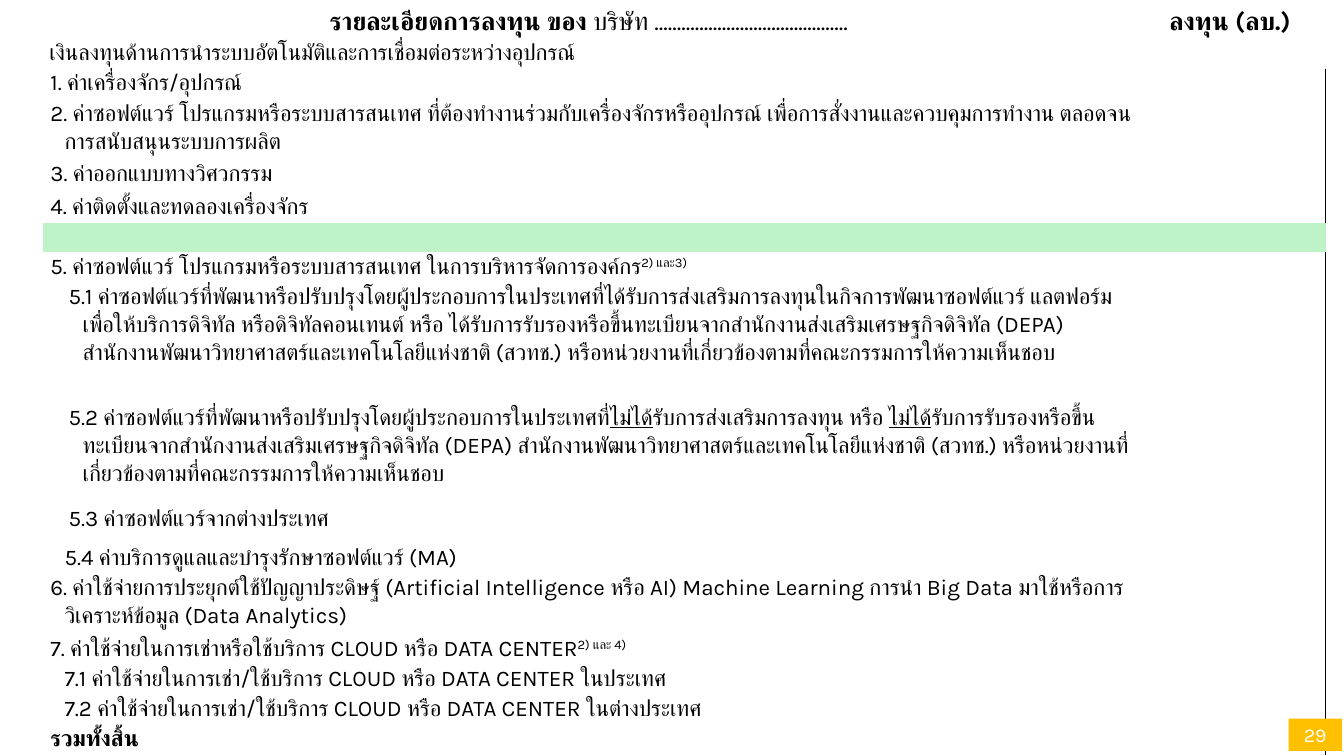
"""Build the investment detail slide: one cost table and a page number."""
from dataclasses import dataclass

from lxml import etree
from pptx import Presentation
from pptx.dml.color import RGBColor
from pptx.enum import shapes, text
from pptx.oxml import ns
from pptx.util import Inches, Pt


@dataclass(frozen=True)
class Theme:
    font: str = "Karla"
    black: str = "000000"
    white: str = "FFFFFF"
    green: str = "BEF2C7"
    amber: str = "FFC000"
    heading: int = 18
    body: int = 16
    number: int = 14
    spacer: int = 8
    line_spacing: float = 1.07


@dataclass(frozen=True)
class Span:
    words: str
    bold: bool | None = None
    underline: bool | None = None
    raised: bool = False


@dataclass(frozen=True)
class Row:
    height: float
    spans: tuple[Span, ...] = ()
    margin: float = 0.21
    hanging: float = -0.14
    fill: str | None = None
    bold: bool = False
    merged: bool = False


THEME = Theme()
NO_STYLE = "{2D5ABB26-0587-4C30-8999-92F81FD0307C}"
TITLE = (Span("รายละเอียดการลงทุน ของ ", bold=True),
         Span("บริษัท ...........................................", bold=False))
AMOUNT = (Span("ลงทุน (ลบ.)"),)
TITLE_HEIGHT = 0.33
COLUMNS = (10.82, 1.9)
ROWS = (
    Row(0.3, (Span("เงินลงทุนด้านการนำระบบอัตโนมัติและการเชื่อมต่อระหว่างอุปกรณ์"),),
        margin=0.06, hanging=0, merged=True),
    Row(0.3, (Span("1. ค่าเครื่องจักร/อุปกรณ์"),), margin=0.07, hanging=0, fill=THEME.white),
    Row(0.6, (Span("2. ค่าซอฟต์แวร์ โปรแกรมหรือระบบสารสนเทศ ที่ต้องทำงานร่วมกับเครื่องจักรหรืออุปกรณ์ "
                   "เพื่อการสั่งงานและควบคุมการทำงาน ตลอดจนการสนับสนุนระบบการผลิต"),),
        fill=THEME.white),
    Row(0.33, (Span("3. ค่าออกแบบทางวิศวกรรม"),), fill=THEME.white),
    Row(0.3, (Span("4. ค่าติดตั้งและทดลองเครื่องจักร"),), fill=THEME.white),
    Row(0.29, fill=THEME.green, merged=True),
    Row(0.3, (Span("5. ค่าซอฟต์แวร์ โปรแกรมหรือระบบสารสนเทศ ในการบริหารจัดการองค์กร"),
              Span("2) และ3)", raised=True))),
    Row(1.2, (Span("5.1 ค่าซอฟต์แวร์ที่พัฒนาหรือปรับปรุงโดยผู้ประกอบการในประเทศที่ได้รับการส่งเสริมการลงทุน"
                   "ในกิจการพัฒนาซอฟต์แวร์ แลตฟอร์มเพื่อให้บริการดิจิทัล หรือดิจิทัลคอนเทนต์ หรือ "
                   "ได้รับการรับรองหรือขึ้นทะเบียนจากสำนักงานส่งเสริมเศรษฐกิจดิจิทัล (DEPA) "
                   "สำนักงานพัฒนาวิทยาศาสตร์และเทคโนโลยีแห่งชาติ (สวทช.) "
                   "หรือหน่วยงานที่เกี่ยวข้องตามที่คณะกรรมการให้ความเห็นชอบ"),),
        margin=0.39, fill=THEME.white),
    Row(1, (Span("5.2 ค่าซอฟต์แวร์ที่พัฒนาหรือปรับปรุงโดยผู้ประกอบการในประเทศที่"),
            Span("ไม่ได้", underline=True),
            Span("รับการส่งเสริมการลงทุน หรือ "),
            Span("ไม่ได้", underline=True),
            Span("รับการรับรองหรือขึ้นทะเบียนจากสำนักงานส่งเสริมเศรษฐกิจดิจิทัล (DEPA) "
                 "สำนักงานพัฒนาวิทยาศาสตร์และเทคโนโลยีแห่งชาติ (สวทช.) "
                 "หรือหน่วยงานที่เกี่ยวข้องตามที่คณะกรรมการให้ความเห็นชอบ")),
        margin=0.39),
    Row(0.39, (Span("5.3 ค่าซอฟต์แวร์จากต่างประเทศ"),), margin=0.39, fill=THEME.white),
    Row(0.3, (Span("5.4 ค่าบริการดูแลและบำรุงรักษาซอฟต์แวร์ (MA)"),),
        hanging=0, fill=THEME.white),
    Row(0.6, (Span("6. ค่าใช้จ่ายการประยุกต์ใช้ปัญญาประดิษฐ์ (Artificial Intelligence หรือ AI) "
                   "Machine Learning การนำ Big Data มาใช้หรือการวิเคราะห์ข้อมูล (Data Analytics)"),),
        fill=THEME.white),
    Row(0.3, (Span("7. ค่าใช้จ่ายในการเช่าหรือใช้บริการ CLOUD หรือ DATA CENTER"),
              Span("2) และ 4)", raised=True))),
    Row(0.3, (Span("7.1 ค่าใช้จ่ายในการเช่า/ใช้บริการ CLOUD หรือ DATA CENTER ในประเทศ"),),
        hanging=0, fill=THEME.white),
    Row(0.3, (Span("7.2 ค่าใช้จ่ายในการเช่า/ใช้บริการ CLOUD หรือ DATA CENTER ในต่างประเทศ"),),
        hanging=0, fill=THEME.white),
    Row(0.3, (Span("รวมทั้งสิ้น"),), bold=True),
)


def write(para, spans: tuple[Span, ...], size: int, color: str, bold: bool | None = None) -> None:
    """Fill a paragraph with spans in one shared font."""
    for span in spans:
        run = para.add_run()
        run.text = span.words
        if span.bold is not None:
            run.font.bold = span.bold
        if span.underline:
            run.font.underline = True
        if span.raised:
            run._r.get_or_add_rPr().set("baseline", "30000")
    font = para.font
    font.name, font.size, font.bold = THEME.font, Pt(size), bold
    font.color.rgb = RGBColor.from_string(color)
    defaults = para._p.pPr.find(ns.qn("a:defRPr"))
    etree.SubElement(defaults, ns.qn("a:cs"), typeface=THEME.font)


def prepare(cell, fill: str | None):
    """Clear a cell's margins, set its fill and return its paragraph."""
    cell.margin_left = cell.margin_right = cell.margin_top = cell.margin_bottom = 0
    if fill:
        cell.fill.solid()
        cell.fill.fore_color.rgb = RGBColor.from_string(fill)
    else:
        cell.fill.background()
    para = cell.text_frame.paragraphs[0]
    para.line_spacing = THEME.line_spacing
    return para


def shrink(para) -> None:
    """Keep an empty paragraph from stretching its row."""
    etree.SubElement(para._p, ns.qn("a:endParaRPr"), sz=str(THEME.spacer * 100))


def rule_right(cell) -> None:
    """Draw a thin line along the right edge of a cell."""
    line = etree.Element(ns.qn("a:lnR"), w=str(Pt(1)))
    paint = etree.SubElement(line, ns.qn("a:solidFill"))
    etree.SubElement(paint, ns.qn("a:srgbClr"), val=THEME.black)
    cell._tc.get_or_add_tcPr().insert(0, line)


def draw_row(table, index: int, row: Row) -> None:
    """Draw one cost row."""
    table.rows[index].height = Inches(row.height)
    label, amount = table.cell(index, 0), table.cell(index, 1)
    para = prepare(label, row.fill)
    shrink(prepare(amount, row.fill))
    if row.spans:
        properties = para._p.get_or_add_pPr()
        properties.set("marL", str(Inches(row.margin)))
        properties.set("indent", str(Inches(row.hanging)))
        write(para, row.spans, THEME.body, THEME.black, row.bold)
    else:
        shrink(para)
    if row.merged:
        label.merge(amount)
    else:
        rule_right(amount)


def draw_table(page) -> None:
    """Draw the cost table with its heading row."""
    height = TITLE_HEIGHT + sum(row.height for row in ROWS)
    frame = page.shapes.add_table(len(ROWS) + 1, len(COLUMNS), Inches(0.43), Inches(0.05),
                                  Inches(sum(COLUMNS)), Inches(height))
    table = frame.table
    table.first_row = table.horz_banding = False
    table._tbl.tblPr.find(ns.qn("a:tableStyleId")).text = NO_STYLE
    for column, width in zip(table.columns, COLUMNS):
        column.width = Inches(width)
    table.rows[0].height = Inches(TITLE_HEIGHT)
    for index, (spans, bold) in enumerate(((TITLE, None), (AMOUNT, True))):
        para = prepare(table.cell(0, index), None)
        para.alignment = text.PP_ALIGN.CENTER
        write(para, spans, THEME.heading, THEME.black, bold)
    for index, row in enumerate(ROWS, start=1):
        draw_row(table, index, row)


def draw_page_number(page) -> None:
    """Draw the page number box."""
    box = page.shapes.add_shape(shapes.MSO_SHAPE.RECTANGLE, Inches(12.78), Inches(7.13),
                                Inches(0.53), Inches(0.32))
    box.shadow.inherit = False
    box.fill.solid()
    box.fill.fore_color.rgb = RGBColor.from_string(THEME.amber)
    box.line.fill.background()
    frame = box.text_frame
    frame.margin_left = frame.margin_right = frame.margin_top = frame.margin_bottom = Inches(0.15)
    frame.vertical_anchor = text.MSO_ANCHOR.MIDDLE
    para = frame.paragraphs[0]
    para.alignment = text.PP_ALIGN.CENTER
    write(para, (Span("29"),), THEME.number, THEME.white)


def main() -> None:
    """Build and save the deck."""
    deck = Presentation()
    deck.slide_width, deck.slide_height = Inches(13.33), Inches(7.5)
    page = deck.slides.add_slide(deck.slide_layouts[6])
    draw_table(page)
    draw_page_number(page)
    deck.save("out.pptx")


if __name__ == "__main__":
    main()
